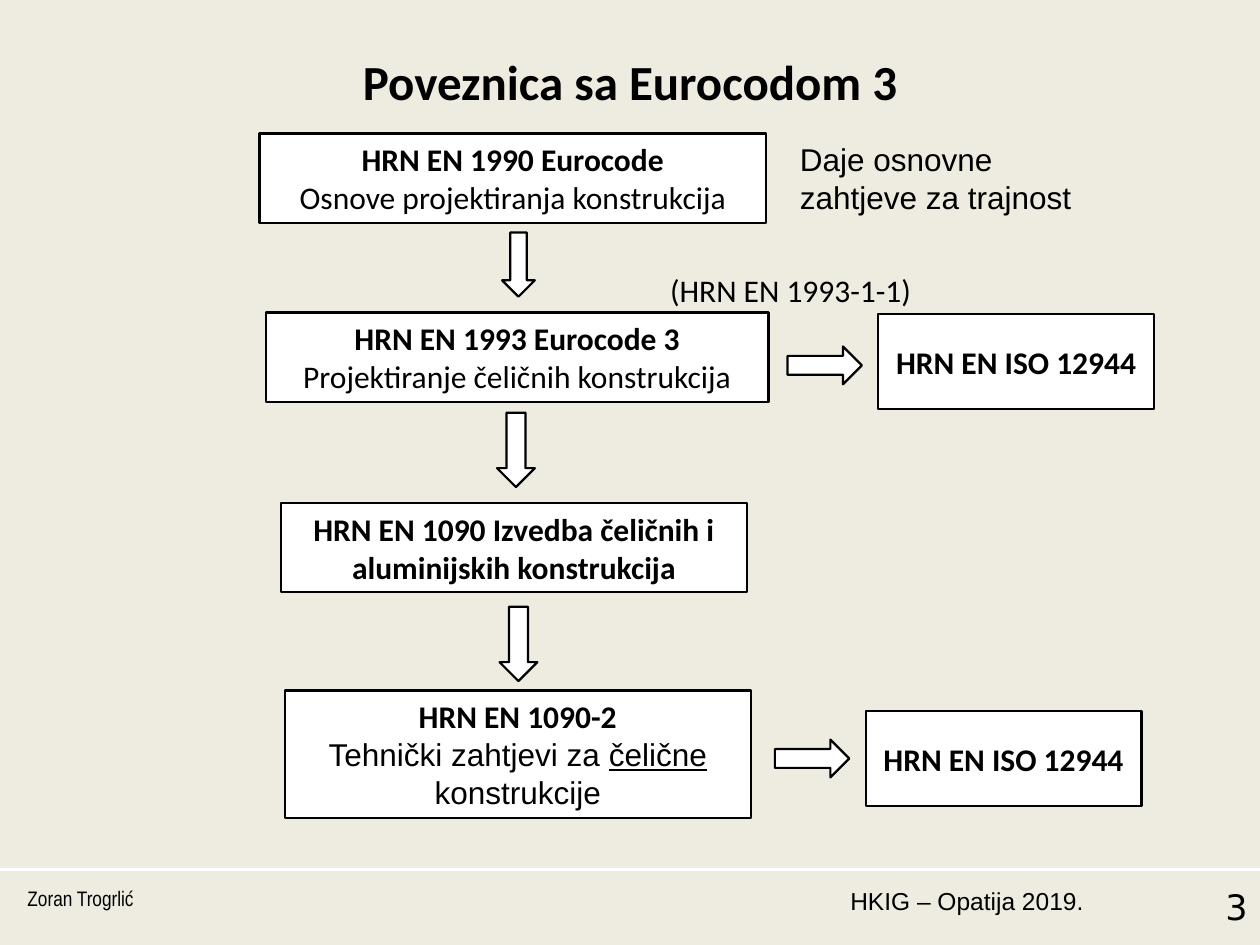
import pptx
import pptx.dml.color
import pptx.enum.shapes
import pptx.enum.text
import pptx.oxml
import pptx.util
from pptx.util import Inches

COLORS = {"background": "EEECE1", "box": "FFFFFF", "ink": "000000", "rule": "FFFFFF"}
ALIGN = pptx.enum.text.PP_ALIGN
ANCHOR = pptx.enum.text.MSO_ANCHOR
SHAPE = pptx.enum.shapes.MSO_SHAPE
BOLD = {"bold": True}
ARIAL = {"font": "Arial"}


def color(name):
    return pptx.dml.color.RGBColor.from_string(COLORS[name])


def write(frame, paragraphs, size=18, font="Calibri", bold=False,
          align=ALIGN.LEFT, anchor=ANCHOR.TOP):
    """Fill a frame; each paragraph is a string or a list of (text, format) runs."""
    frame.word_wrap = True
    frame.vertical_anchor = anchor
    if isinstance(paragraphs, str):
        paragraphs = [paragraphs]
    for index, runs in enumerate(paragraphs):
        paragraph = frame.add_paragraph() if index else frame.paragraphs[0]
        paragraph.alignment = align
        if isinstance(runs, str):
            runs = [(runs, {})]
        for text, style in runs:
            run = paragraph.add_run()
            run.text = text
            run.font.size = pptx.util.Pt(size)
            run.font.name = style.get("font", font)
            run.font.bold = style.get("bold", bold)
            run.font.underline = style.get("underline", False)
            run.font.color.rgb = color("ink")


def add_label(slide, place, text, **style):
    box = slide.shapes.add_textbox(*map(Inches, place))
    write(box.text_frame, text, **style)


def add_outlined(slide, kind, place):
    shape = slide.shapes.add_shape(kind, *map(Inches, place))
    shape.shadow.inherit = False
    shape.fill.solid()
    shape.fill.fore_color.rgb = color("box")
    shape.line.color.rgb = color("ink")
    shape.line.width = pptx.util.Pt(1.25)
    return shape


def add_standard(slide, place, paragraphs, **style):
    box = add_outlined(slide, SHAPE.RECTANGLE, place)
    write(box.text_frame, paragraphs, align=ALIGN.CENTER, anchor=ANCHOR.MIDDLE, **style)


def add_arrow(slide, left, top, width=0.59, height=0.3, rotation=0):
    arrow = add_outlined(slide, SHAPE.RIGHT_ARROW, (left, top, width, height))
    arrow.rotation = rotation


def add_footer(slide):
    rule = slide.shapes.add_connector(
        pptx.enum.shapes.MSO_CONNECTOR.STRAIGHT,
        Inches(0), Inches(6.9), Inches(10), Inches(6.9))
    rule.line.color.rgb = color("rule")
    rule.line.width = pptx.util.Pt(1.5)
    rule._element.spPr.append(pptx.oxml.parse_xml(
        '<a:effectLst xmlns:a="http://schemas.openxmlformats.org/drawingml/2006/main"/>'))
    add_label(slide, (6.57, 6.98, 2.13, 0.52), "HKIG – Opatija 2019.",
              size=14, font="Arial", align=ALIGN.RIGHT)
    add_label(slide, (0.12, 6.98, 2.17, 0.52), "Zoran Trogrlić",
              size=12, font="Arial Narrow")
    add_label(slide, (8.78, 6.98, 1.22, 0.52), "3",
              size=20, font="DejaVu Sans", align=ALIGN.RIGHT)


def add_title(slide, text):
    title = slide.shapes.title
    title.left, title.top, title.width, title.height = map(Inches, (0.5, 0.3, 9, 0.69))
    write(title.text_frame, text, size=28, bold=True,
          align=ALIGN.CENTER, anchor=ANCHOR.MIDDLE)


def main():
    deck = pptx.Presentation()
    deck.slide_width, deck.slide_height = Inches(10), Inches(7.5)
    slide = deck.slides.add_slide(deck.slide_layouts[5])
    slide.background.fill.solid()
    slide.background.fill.fore_color.rgb = color("background")

    add_footer(slide)
    add_title(slide, "Poveznica sa Eurocodom 3")

    add_standard(slide, (2.06, 1.06, 4.02, 0.71), [
        [("HRN EN 1990 Eurocode", BOLD)],
        "Osnove projektiranja konstrukcija"])
    add_standard(slide, (2.11, 2.48, 3.99, 0.71), [
        [("HRN EN 1993 Eurocode 3 ", BOLD),
         ("Projektiranje čeličnih konstrukcija", {})]])
    add_standard(slide, (2.23, 3.99, 3.7, 0.71),
                 "HRN EN 1090 Izvedba čeličnih i aluminijskih konstrukcija", bold=True)
    add_standard(slide, (2.26, 5.48, 3.7, 1.01), [
        [("HRN EN 1090-2", BOLD)],
        [("Tehnički zahtjevi za ", ARIAL),
         ("čelične", {**ARIAL, "underline": True}),
         (" konstrukcije", ARIAL)]])

    add_arrow(slide, 3.86, 1.97, 0.51, 0.26, rotation=90)
    add_arrow(slide, 3.8, 3.42, rotation=90)
    add_arrow(slide, 3.82, 4.96, rotation=90)

    for arrow_left, arrow_top, box_top in ((6.25, 2.75, 2.49), (6.15, 5.87, 5.64)):
        add_arrow(slide, arrow_left, arrow_top)
        add_standard(slide, (arrow_left + 0.72, box_top, 2.19, 0.76),
                     "HRN EN ISO 12944", bold=True)

    add_label(slide, (6.25, 1.06, 2.44, 0.71), "Daje osnovne zahtjeve za trajnost",
              font="Arial")
    add_label(slide, (5.22, 2.1, 2.44, 0.4), "(HRN EN 1993-1-1)")

    deck.save("out.pptx")


if __name__ == "__main__":
    main()
